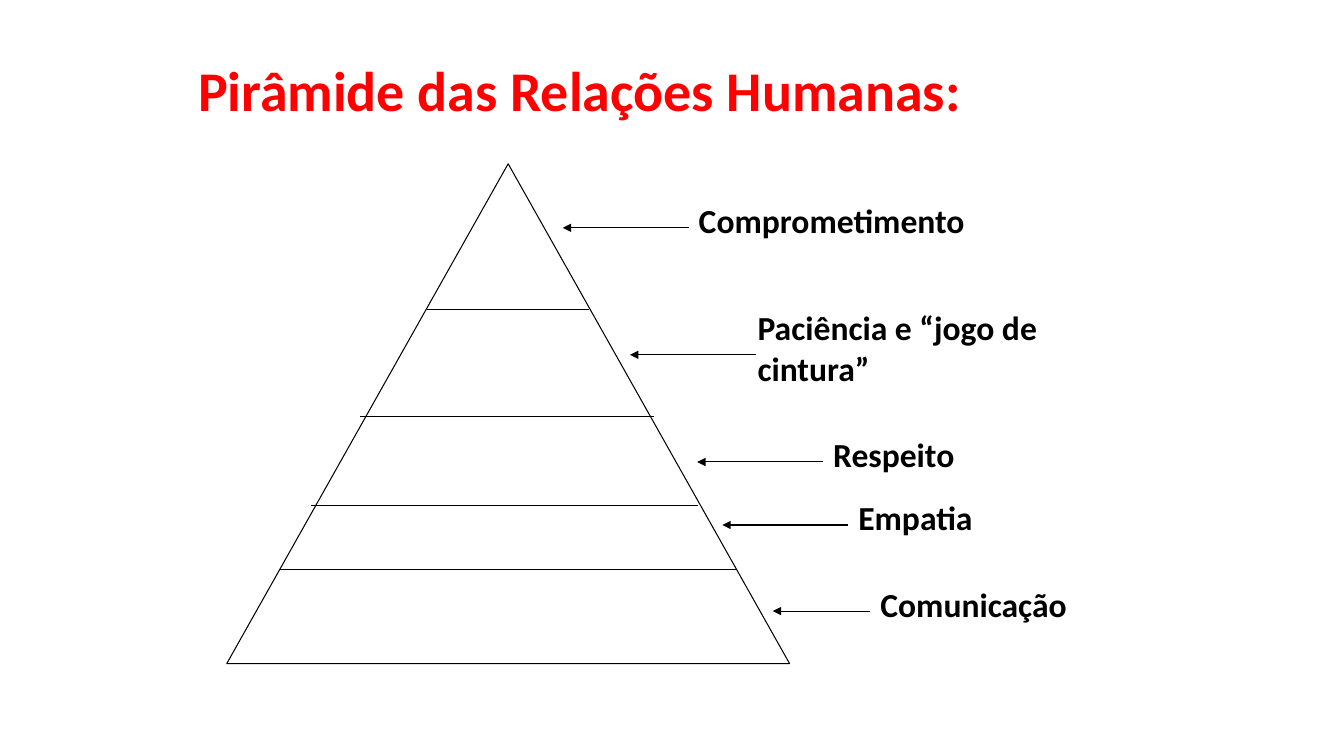
from lxml.etree import SubElement
from pptx import Presentation
from pptx.dml.color import RGBColor
from pptx.enum.shapes import MSO_CONNECTOR, MSO_SHAPE
from pptx.enum.text import MSO_ANCHOR, MSO_AUTO_SIZE, PP_ALIGN
from pptx.oxml.ns import qn
from pptx.util import Pt

PX = 9525  # EMU per px, 96 px to the inch
COLORS = {"title": "FF0000", "ink": "000000", "paper": "FFFFFF"}
TITLE_FONT = {"name": "Calibri", "size": Pt(40), "bold": True}
LABEL_FONT = {"name": "Calibri", "size": Pt(24), "bold": True}

# Dividers inside the pyramid: left, right, y
DIVIDERS = [(191, 345, 139), (127, 407, 241), (80, 449, 325), (51, 485, 386)]

# Labels: text, box, then arrow start (from the box corner) and length
LEVELS = [
    ("Comprometimento", (656, 186, 312, 49), (0, 31), 120),
    ("Paciência e “jogo de cintura”", (712, 288, 312, 87), (8, 50), 120),
    ("Respeito", (784, 409, 312, 49), (0, 31), 120),
    ("Empatia", (808, 469, 312, 49), (0, 31), 120),
    ("Comunicação", (829, 551, 243, 49), (0, 31), 93),
]


def px(*lengths):
    return [length * PX for length in lengths]


def rgb(key):
    return RGBColor.from_string(COLORS[key])


def format_text(paragraph, text, font, color):
    paragraph.text = text
    paragraph.alignment = PP_ALIGN.LEFT
    for key, value in font.items():
        setattr(paragraph.font, key, value)
    paragraph.font.color.rgb = rgb(color)


def draw_outline(line):
    line.color.rgb = rgb("ink")
    line.width = Pt(0.75)


def add_line(slide, x1, y1, x2, y2, arrow=False):
    connector = slide.shapes.add_connector(MSO_CONNECTOR.STRAIGHT, *px(x1, y1, x2, y2))
    draw_outline(connector.line)
    if arrow:
        SubElement(connector.line._get_or_add_ln(), qn("a:tailEnd"), type="triangle")
    SubElement(connector._element.spPr, qn("a:effectLst"))


def place_title(slide, box):
    title = slide.shapes.title
    title.left, title.top, title.width, title.height = px(*box)
    title.text_frame.vertical_anchor = MSO_ANCHOR.MIDDLE
    heading = title.text_frame.paragraphs[0]
    heading.line_spacing = 0.9
    format_text(heading, "Pirâmide das Relações Humanas:", TITLE_FONT, "title")


def add_pyramid(slide, box):
    pyramid = slide.shapes.add_shape(MSO_SHAPE.ISOSCELES_TRIANGLE, *px(*box))
    pyramid.shadow.inherit = False
    pyramid.fill.solid()
    pyramid.fill.fore_color.rgb = rgb("paper")
    draw_outline(pyramid.line)
    left, top = box[:2]
    for start, end, y in DIVIDERS:
        add_line(slide, left + start, top + y, left + end, top + y)


def add_level(slide, text, box, arrow_start, arrow_length):
    label = slide.shapes.add_textbox(*px(*box)).text_frame
    label.word_wrap = True
    label.auto_size = MSO_AUTO_SIZE.SHAPE_TO_FIT_TEXT
    format_text(label.paragraphs[0], text, LABEL_FONT, "ink")
    x, y = box[0] + arrow_start[0], box[1] + arrow_start[1]
    add_line(slide, x, y, x - arrow_length, y, arrow=True)


def main():
    presentation = Presentation()
    presentation.slide_width, presentation.slide_height = px(1280, 720)
    slide = presentation.slides.add_slide(presentation.slide_layouts[5])
    place_title(slide, (179, 29, 941, 120))
    add_pyramid(slide, (216, 156, 536, 476))
    for level in LEVELS:
        add_level(slide, *level)
    presentation.save("out.pptx")


if __name__ == "__main__":
    main()
